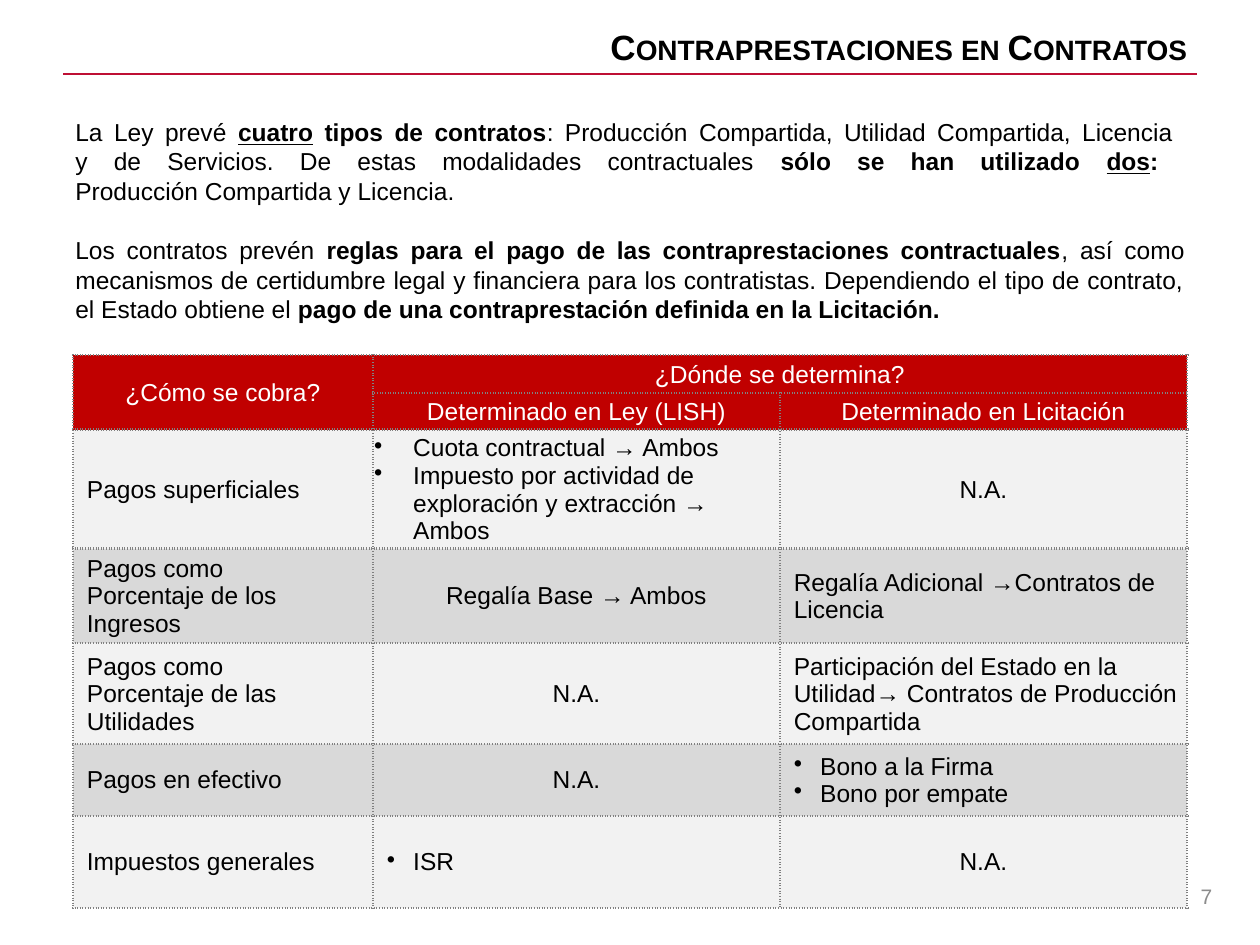
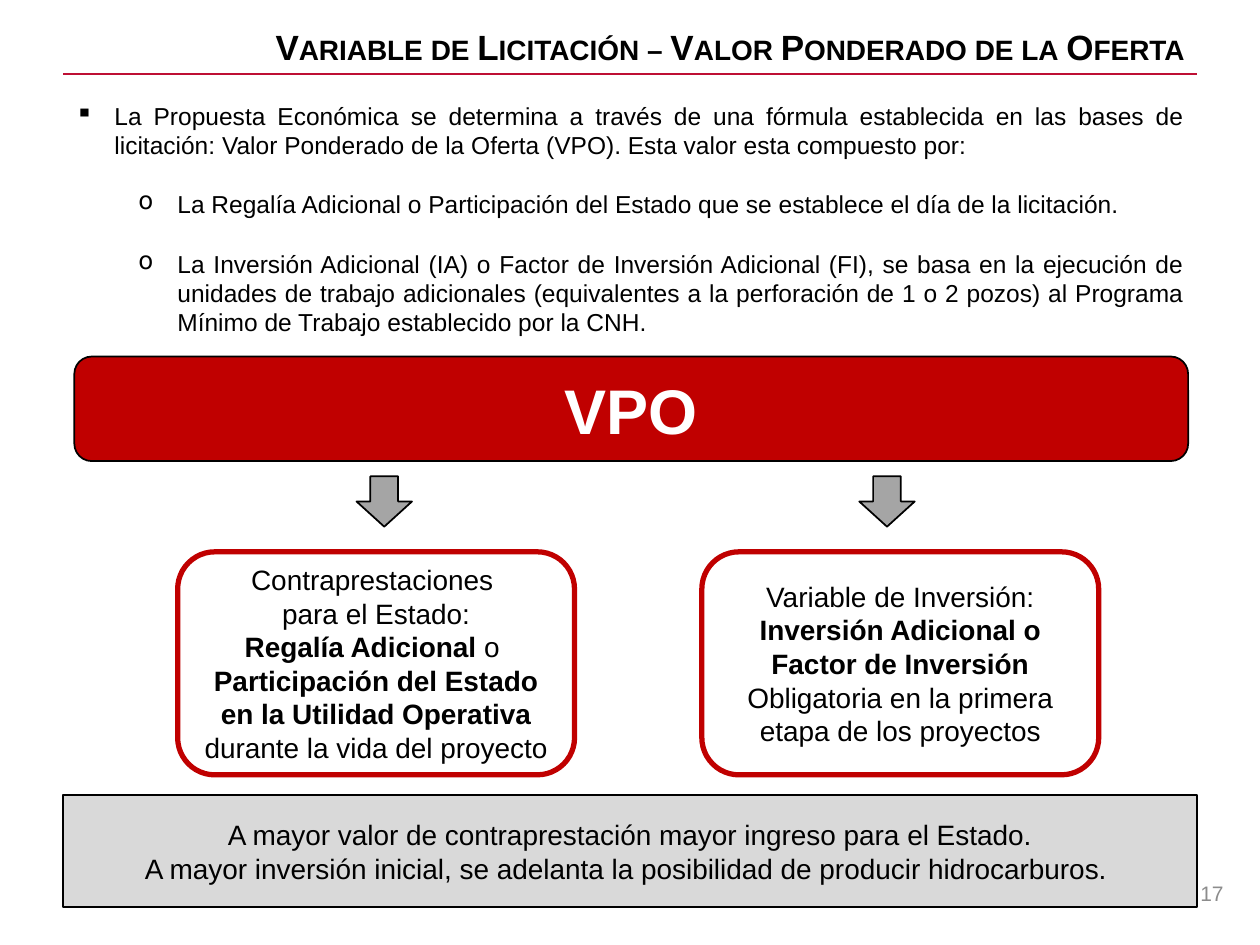
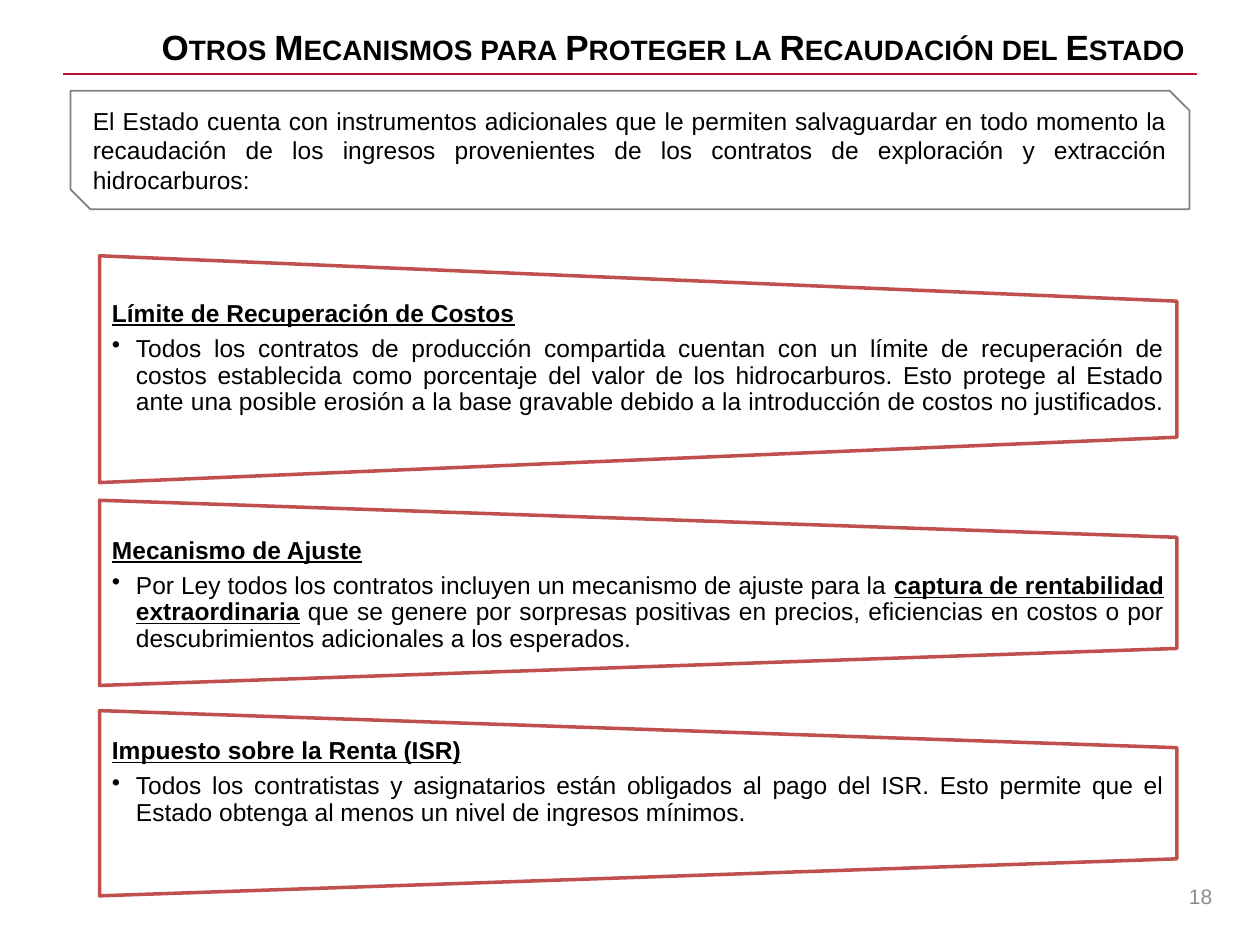
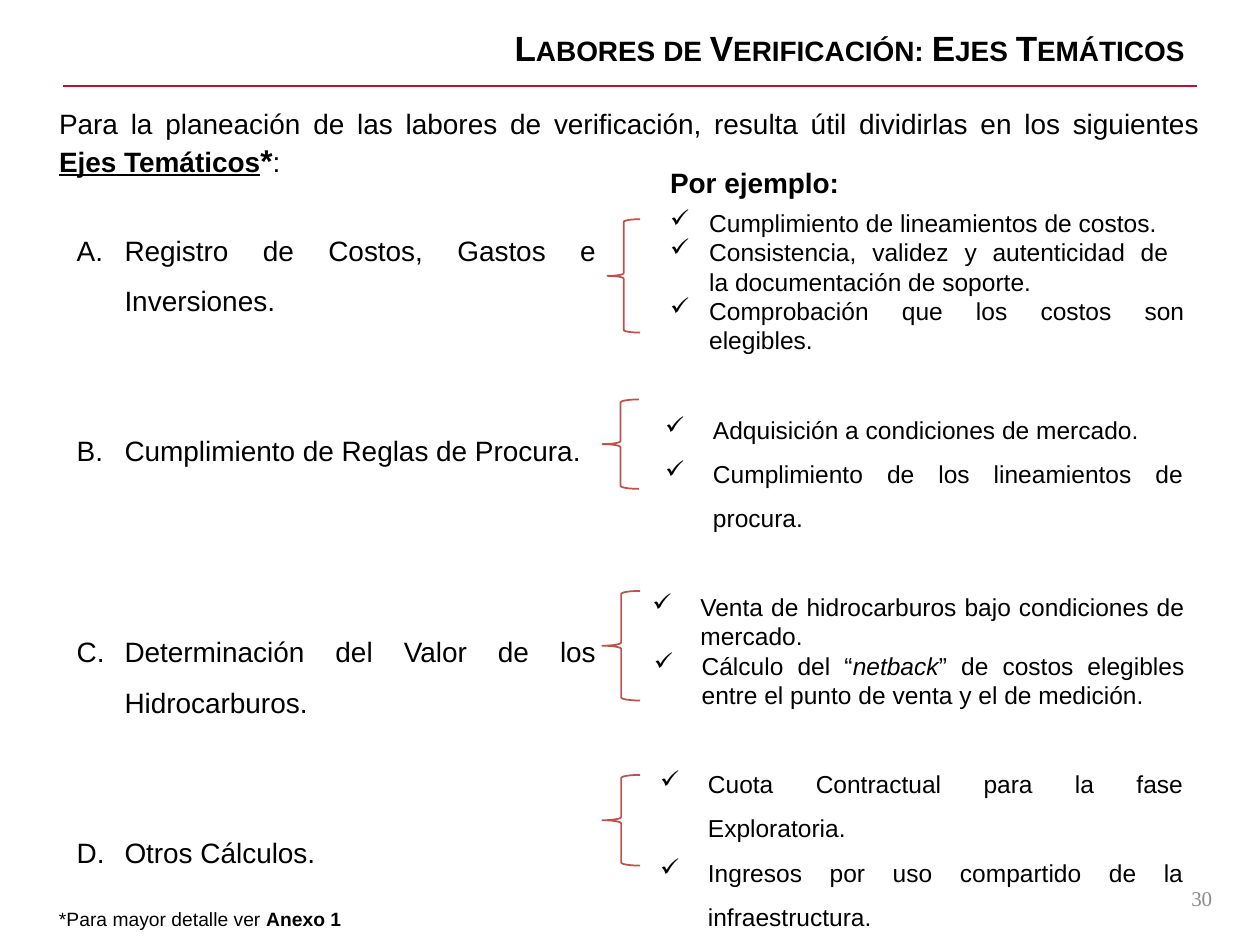
from lxml import etree
from pptx import Presentation, util as u
from pptx.dml.color import RGBColor
from pptx.enum import shapes, text
from pptx.oxml import parse_xml
from pptx.oxml.ns import nsdecls, qn

hues = {
    "ink": "000000", "white": "FFFFFF", "rule": "BE0F34", "red": "C00000",
    "brick": "C0504D", "gray": "808080", "page": "8C8C8C", "arrow": "A5A5A5",
    "pale": "F2F2F2", "dim": "D9D9D9",
}
rgb = {name: RGBColor.from_string(code) for name, code in hues.items()}
sides = {"l": text.PP_ALIGN.LEFT, "c": text.PP_ALIGN.CENTER,
         "r": text.PP_ALIGN.RIGHT, "j": text.PP_ALIGN.JUSTIFY}
mid, top = text.MSO_ANCHOR.MIDDLE, text.MSO_ANCHOR.TOP
kinds = shapes.MSO_SHAPE
flags = {"b": "bold", "u": "underline", "i": "italic"}


def write(frame, paras, size=14, hue="ink", font="Arial", al="j", style="", **form):
    frame.word_wrap = True
    frame.vertical_anchor = form.get("anchor", top)
    for side, gap in form.get("ins", {}).items():
        setattr(frame, "margin_" + side, u.Inches(gap))
    for n, item in enumerate(paras):
        para = frame.paragraphs[0] if n == 0 else frame.add_paragraph()
        own = dict(form)
        if isinstance(item, dict):
            own.update(item)
            item = own["runs"]
        look = {"alignment": sides[own.get("al", al)], "line_spacing": own.get("ls"),
                "space_before": own.get("before"), "space_after": own.get("after")}
        for key, val in look.items():
            if val is not None:
                setattr(para, key, val)
        props = para._p.get_or_add_pPr()
        left, hang = own.get("ind", (0, 0))
        props.set("marL", str(u.Inches(left)))
        props.set("indent", str(u.Inches(hang)))
        mark = own.get("mark")
        if mark == "A.":
            etree.SubElement(props, qn("a:buAutoNum"), type="alphaUcPeriod")
        elif mark:
            etree.SubElement(props, qn("a:buChar"), char=mark)
        else:
            etree.SubElement(props, qn("a:buNone"))
        for part in [item] if isinstance(item, str) else item:
            words, mode, pts = (part, style, size) if isinstance(part, str) else (*part, size)[:3]
            for k, line in enumerate(words.split("\n")):
                if k:
                    para.add_line_break()
                if not line:
                    continue
                run = para.add_run()
                run.text = line
                fmt = {"name": font, "size": u.Pt(pts)}
                fmt.update({flags[m]: True for m in mode if m in flags})
                for key, val in fmt.items():
                    setattr(run.font, key, val)
                run.font.color.rgb = rgb[hue]
                if "s" in mode:
                    run._r.get_or_add_rPr().set("cap", "small")


def draw(slide, kind, at, fill=None, line=None, width=1, turn=0):
    box = [u.Inches(v) for v in at]
    if kind is None:
        return slide.shapes.add_textbox(*box).text_frame
    form = slide.shapes.add_shape(kind, *box)
    form.shadow.inherit = False
    form.rotation = turn
    if fill:
        form.fill.solid()
        form.fill.fore_color.rgb = rgb[fill]
    else:
        form.fill.background()
    if line:
        form.line.color.rgb = rgb[line]
        form.line.width = u.Pt(width)
    else:
        form.line.fill.background()
    return form.text_frame


deck = Presentation()
deck.slide_width, deck.slide_height = u.Inches(10), u.Inches(7.5)
heads = [
    ("Contraprestaciones en Contratos", 0.52, 0.15, 0.59, "7", 7.39, 6.91),
    ("Variable de Licitación – Valor Ponderado de la Oferta", 0.5, 0.15, 0.59, "17", 7.48, 6.89),
    ("Otros Mecanismos para Proteger la Recaudación del Estado", 0.5, 0.15, 0.59, "18", 7.39, 6.91),
    ("Labores de Verificación: Ejes Temáticos", 0.5, 0.16, 0.68, "30", 7.39, 6.93),
]
pages = []
for title, left, y, rule, num, numx, numy in heads:
    slide = deck.slides.add_slide(deck.slide_layouts[6])
    pages.append(slide)
    bar = slide.shapes.add_connector(shapes.MSO_CONNECTOR.STRAIGHT, u.Inches(0.5),
                                     u.Inches(rule), u.Inches(9.5), u.Inches(rule))
    bar.line.color.rgb = rgb["rule"]
    bar.line.width = u.Pt(1)
    etree.SubElement(bar._element.spPr, qn("a:effectLst"))
    write(draw(slide, None, (left, y, 9, 0.44)), [title], 20, al="r", style="bs", anchor=mid)
    last = num == "30"
    spot = draw(slide, kinds.RECTANGLE if last else None, (numx, numy, 2.33, 0.4),
                "white" if last else None)
    write(spot, [num], 12, "page", "Times New Roman" if last else "Arial", "r", anchor=mid)
pay, bid, guard, audit = pages

write(draw(pay, None, (0.5, 0.88, 9, 1.75)), [
    ["La Ley prevé ", ("cuatro", "bu"), (" tipos de contratos", "b"),
     ": Producción Compartida, Utilidad Compartida, Licencia \ny de Servicios. "
     "De estas modalidades contractuales ",
     ("sólo se han utilizado ", "b"), ("dos", "bu"), (": \n", "b"),
     "Producción Compartida y Licencia."],
    {"before": u.Pt(17), "runs": [
        "Los contratos prevén ", ("reglas para el pago de las contraprestaciones contractuales", "b"),
        ", así como mecanismos de certidumbre legal y financiera para los contratistas. "
        "Dependiendo el tipo de contrato, el Estado obtiene el ",
        ("pago de una contraprestación definida en la Licitación. ", "b")]},
])

cols = [2.38, 3.23, 3.23]
rows = [0.3, 0.29, 0.94, 0.75, 0.8, 0.57, 0.73]
none = ("c", "N.A.")
cells = [
    [("c", "¿Cómo se cobra?"), ("c", "¿Dónde se determina?"), None],
    [None, ("c", "Determinado en Ley (LISH)"), ("c", "Determinado en Licitación")],
    [("l", "Pagos superficiales"),
     ("wide", "Cuota contractual → Ambos",
      "Impuesto por actividad de exploración y extracción → Ambos"), none],
    [("l", "Pagos como", "Porcentaje de los Ingresos"), ("c", "Regalía Base → Ambos"),
     ("l", "Regalía Adicional →Contratos de Licencia")],
    [("l", "Pagos como", "Porcentaje de las Utilidades"), none,
     ("l", "Participación del Estado en la Utilidad→ Contratos de Producción Compartida")],
    [("l", "Pagos en efectivo"), none, ("dot", "Bono a la Firma", "Bono por empate")],
    [("l", "Impuestos generales"), ("dot", "ISR"), none],
]
modes = {
    "c": {"al": "c"},
    "l": {"al": "l", "ind": (0.1, 0)},
    "dot": {"al": "l", "ind": (0.31, -0.21), "mark": "•"},
    "wide": {"al": "l", "ind": (0.31, -0.31), "mark": "•"},
}
grid = pay.shapes.add_table(len(rows), len(cols), u.Inches(0.58), u.Inches(2.82),
                            u.Inches(sum(cols)), u.Inches(sum(rows))).table
grid.first_row = grid.horz_banding = False
for col, wide in zip(grid.columns, cols):
    col.width = u.Inches(wide)
for r, high in enumerate(rows):
    grid.rows[r].height = u.Inches(high)
    for c, entry in enumerate(cells[r]):
        cell = grid.cell(r, c)
        for edge in "LRTB":
            cell._tc.get_or_add_tcPr().append(parse_xml(
                f'<a:ln{edge} {nsdecls("a")} w="19050"><a:solidFill><a:srgbClr val="{hues["gray"]}"/>'
                f'</a:solidFill><a:prstDash val="sysDot"/></a:ln{edge}>'))
        cell.fill.solid()
        cell.fill.fore_color.rgb = rgb["red" if r < 2 else ("pale", "dim")[r % 2]]
        for side, gap in {"left": 0.01, "right": 0.01, "top": 0.01, "bottom": 0}.items():
            setattr(cell, "margin_" + side, u.Inches(gap))
        if entry:
            mode, *lines = entry
            write(cell.text_frame, lines, hue="white" if r < 2 else "ink", **modes[mode])
        cell.vertical_anchor = mid
grid.cell(0, 0).merge(grid.cell(1, 0))
grid.cell(0, 1).merge(grid.cell(0, 2))

sub = {"ind": (0.81, -0.31), "mark": "o", "before": u.Pt(17)}
write(draw(bid, None, (0.5, 0.7, 9, 1.81)), [
    "La Propuesta Económica se determina a través de una fórmula establecida en las bases de "
    "licitación: Valor Ponderado de la Oferta (VPO). Esta valor esta compuesto por: ",
    {**sub, "runs": "La Regalía Adicional o Participación del Estado que se establece "
                    "el día de la licitación."},
    {**sub, "runs": "La Inversión Adicional (IA) o Factor de Inversión Adicional (FI), se basa en la "
                    "ejecución de unidades de trabajo adicionales (equivalentes a la perforación de "
                    "1 o 2 pozos) al Programa Mínimo de Trabajo establecido por la CNH. "},
], ind=(0.31, -0.31), mark="▪", ins={"top": 0.1})
write(draw(bid, kinds.ROUNDED_RECTANGLE, (0.59, 2.83, 8.84, 0.83), "red", "ink"),
      ["VPO"], 36, "white", al="c", style="b", anchor=mid)
parts = [
    (1.41, 2.85, ["Contraprestaciones ", "para el Estado:",
                  [("Regalía Adicional", "b"), " o \n",
                   ("Participación del Estado en la Utilidad Operativa", "b")],
                  "durante la vida del proyecto"]),
    (5.57, 6.84, ["Variable de Inversión:", [("Inversión Adicional o Factor de Inversión", "b")],
                  "Obligatoria en la primera etapa de los proyectos"]),
]
for x, tip, lines in parts:
    draw(bid, kinds.LEFT_ARROW, (tip, 3.76, 0.4, 0.44), "arrow", "ink", turn=270)
    write(draw(bid, kinds.ROUNDED_RECTANGLE, (x, 4.38, 3.15, 1.77), None, "red", 3),
          lines, 16, al="c", anchor=mid)
write(draw(bid, kinds.RECTANGLE, (0.5, 6.31, 9, 0.89), "dim", "ink"), [
    "A mayor valor de contraprestación mayor ingreso para el Estado.",
    "A mayor inversión inicial, se adelanta la posibilidad de producir hidrocarburos. ",
], 16, al="c", anchor=mid)

write(draw(guard, kinds.SNIP_2_DIAG_RECTANGLE, (0.56, 0.72, 8.88, 0.94), None, "gray"), [
    "El Estado cuenta con instrumentos adicionales que le permiten salvaguardar en todo momento la "
    "recaudación de los ingresos provenientes de los contratos de exploración y extracción "
    "hidrocarburos:"], anchor=mid)
tools = [
    (2.03, 1.8, 2.39, "Límite de Recuperación de Costos", [
        "Todos los contratos de producción compartida cuentan con un límite de recuperación de costos "
        "establecida como porcentaje del valor de los hidrocarburos. Esto protege al Estado ante una "
        "posible erosión a la base gravable debido a la introducción de costos no justificados. "]),
    (3.97, 1.47, 4.27, "Mecanismo de Ajuste", [
        "Por Ley todos los contratos incluyen un mecanismo de ajuste para la ",
        ("captura de rentabilidad extraordinaria", "bu"),
        " que se genere por sorpresas positivas en precios, eficiencias en costos o por "
        "descubrimientos adicionales a los esperados. "]),
    (5.64, 1.47, 5.86, "Impuesto sobre la Renta (ISR)", [
        "Todos los contratistas y asignatarios están obligados al pago del ISR. Esto permite que el "
        "Estado obtenga al menos un nivel de ingresos mínimos."]),
]
span = 8.55
for y, high, texty, name, lines in tools:
    draw(guard, kinds.FLOWCHART_MANUAL_OPERATION,
         (0.79 + (span - high) / 2, y + (high - span) / 2, high, span), None, "brick", 2, 270)
    write(draw(guard, None, (0.79, texty, span, 1.08)), [
        {"runs": [(name, "bu")], "after": u.Pt(5)},
        {"runs": lines, "ind": (0.19, -0.19), "mark": "•"},
    ], ls=0.9, ins={"top": 0, "bottom": 0})

write(draw(audit, None, (0.37, 0.8, 9.35, 0.67)), [
    ["Para la planeación de las labores de verificación, resulta útil dividirlas en los siguientes \n",
     ("Ejes Temáticos", "bu"), ("*", "b", 18), ":"]], 16)
write(draw(audit, None, (0.3, 1.67, 4.53, 5.35)), [
    "Registro de Costos, Gastos e Inversiones. ",
    {"runs": "Cumplimiento de Reglas de Procura.", "before": u.Pt(57)},
    {"runs": "Determinación del Valor de los Hidrocarburos. ", "before": u.Pt(86)},
    {"runs": "Otros Cálculos.", "before": u.Pt(57)},
], 16, ind=(0.59, -0.38), mark="A.", ls=1.5)
write(draw(audit, None, (0.37, 7.15, 6.66, 0.29)),
      [["*Para mayor detalle ver ", ("Anexo 1", "b")]], 11, al="l")
write(draw(audit, None, (5.22, 1.13, 1.64, 0.5)), ["Por ejemplo:"], 16, style="b", ls=1.5)
lists = [
    ((5.22, 1.6, 4.28, 1.28), (0.31, -0.31), 1, (4.82, 1.74, 0.26, 0.9), [
        "Cumplimiento de lineamientos de costos.",
        "Consistencia, validez y autenticidad de \nla documentación de soporte.",
        "Comprobación que los costos son elegibles."]),
    ((5.07, 3.13, 4.42, 1.16), (0.49, -0.38), 1.5, (4.78, 3.17, 0.29, 0.71), [
        "Adquisición a condiciones de mercado.",
        "Cumplimiento de los lineamientos de procura."]),
    ((5.08, 4.65, 4.42, 1.04), (0.38, -0.38), 1, (4.78, 4.69, 0.3, 0.87), [
        "Venta de hidrocarburos bajo condiciones de mercado.",
        {"ind": (0.39, -0.38), "runs": [
            "Cálculo del “", ("netback", "i"),
            "” de costos elegibles entre el punto de venta y el de medición. "]}]),
    ((5.14, 5.94, 4.35, 1.16), (0.38, -0.38), 1.5, (4.78, 6.15, 0.3, 0.72), [
        "Cuota Contractual para la fase Exploratoria.",
        "Ingresos por uso compartido de la infraestructura."]),
]
for area, ind, ls, brace, lines in lists:
    write(draw(audit, None, area), lines, ind=ind, mark="✓", ls=ls)
    draw(audit, kinds.LEFT_BRACE, brace, None, "brick")

deck.save("out.pptx")
